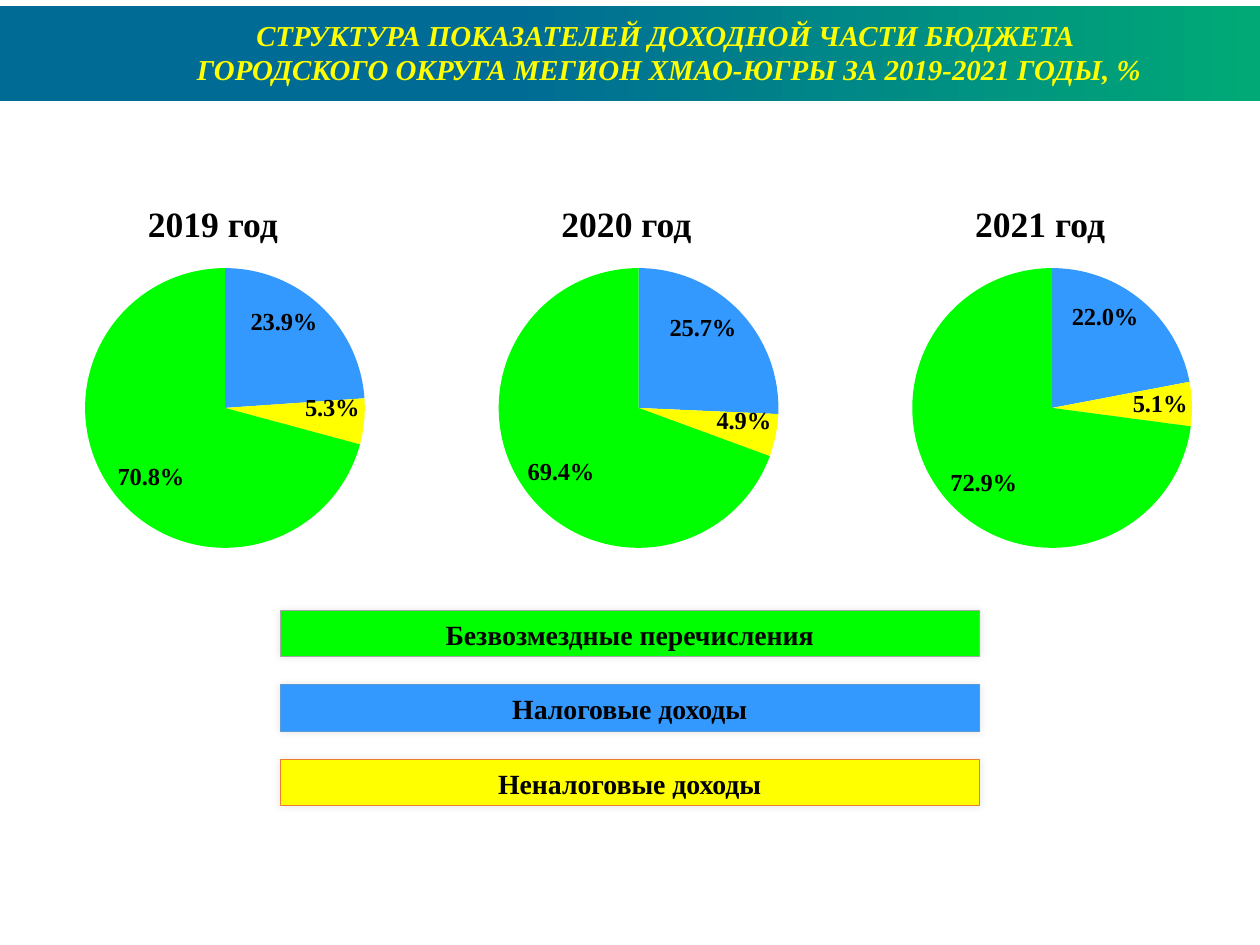
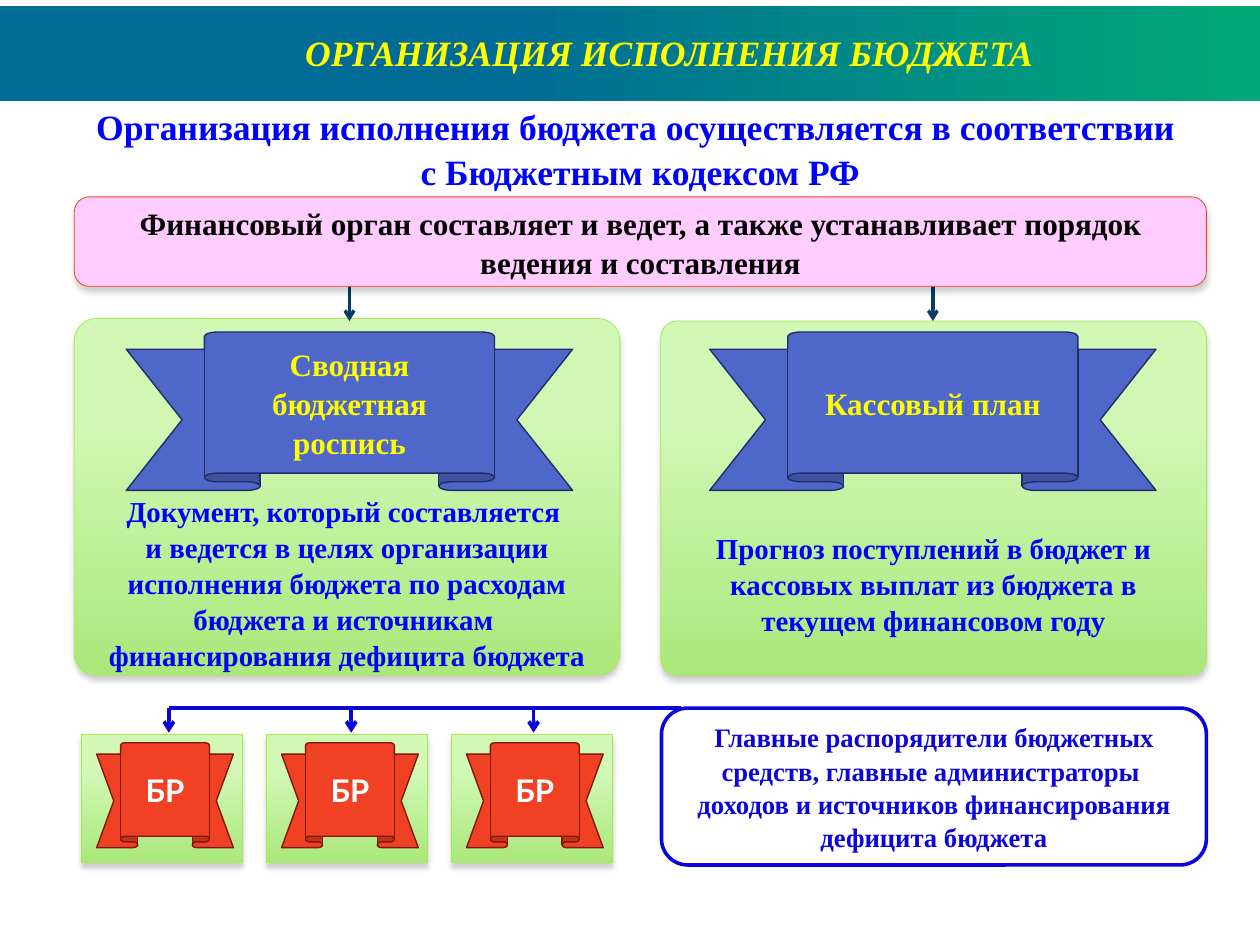
from pptx import Presentation
from pptx.chart.data import CategoryChartData
from pptx.dml.color import RGBColor
from pptx.enum.chart import XL_CHART_TYPE, XL_LABEL_POSITION
from pptx.enum.shapes import MSO_CONNECTOR, MSO_SHAPE
from pptx.enum.text import MSO_ANCHOR, MSO_AUTO_SIZE, PP_ALIGN
from pptx.oxml import parse_xml
from pptx.oxml.ns import nsdecls, qn
from pptx.util import Cm, Pt

SERIF = "Times New Roman"
BLACK, WHITE, YELLOW = "000000", "FFFFFF", "FFFF00"
GREEN, SKY, BLUE, NAVY = "00FF00", "3399FF", "0000FF", "0D03DB"
RED = "F14124"
LIME = ("D1F8B5", "AAE87B", 28, 270)
BAND = ("006C95", "00A976", 40, 0)
GLOW = {"alpha": 10, "blur": 7, "distance": 0, "angle": 0}
DROP = {"alpha": 20, "blur": 5, "distance": 4, "angle": 90}
INSETS = (0.4, 0.2, 0.4, 0.2)


def rgb(value):
    return RGBColor.from_string(value)


def cm(*values):
    return [Cm(value) for value in values]


def assign(target, values):
    for name, value in values.items():
        setattr(target, name, value)


class Slides:
    """Holds the deck, its shared style and the current page."""

    def __init__(self, width, height):
        self.deck = Presentation()
        self.deck.slide_width, self.deck.slide_height = cm(width, height)
        self.layout = self.deck.slide_layouts[5]
        self.page = None

    def add_page(self, title, size):
        first = self.page is None
        self.page = self.deck.slides.add_slide(self.layout)
        if first:
            band = self.shape(MSO_SHAPE.RECTANGLE, (0, 0.2, 40, 3), BAND)
            self.layout.shapes.element.insert(2, band.element)
        box = self.page.shapes.title
        left, top, width, height = cm(2.5, 0.4, 37.5, 2.5)
        assign(box, {"left": left, "top": top, "width": width, "height": height})
        self.set_text(box, [title], size, YELLOW, italic=True,
                      insets=(0.25, 0.1, 0.25, 0.1), spacing=1.0)

    def set_text(self, box, paragraphs, size, color, font=SERIF, italic=False,
                 insets=INSETS, spacing=1.04, wrap=True):
        """Fill a box with centred bold paragraphs; a newline inside one breaks the line."""
        frame = box.text_frame
        left, top, right, bottom = cm(*insets)
        assign(frame, {"margin_left": left, "margin_top": top, "margin_right": right,
                       "margin_bottom": bottom, "word_wrap": wrap,
                       "auto_size": MSO_AUTO_SIZE.NONE, "vertical_anchor": MSO_ANCHOR.MIDDLE})
        for index, text in enumerate(paragraphs):
            para = frame.add_paragraph() if index else frame.paragraphs[0]
            para.text = text
            assign(para, {"alignment": PP_ALIGN.CENTER, "line_spacing": spacing})
            for span in para.runs:
                assign(span.font, {"name": font, "size": Pt(size), "bold": True, "italic": italic})
                span.font.color.rgb = rgb(color)

    def text(self, area, text, size, color, **style):
        self.set_text(self.page.shapes.add_textbox(*cm(*area)), [text], size, color, **style)

    def shape(self, kind, area, fill, line=None, line_width=0.75, shadow=None, adjust=()):
        """Add a preset shape; fill is a colour or (start, end, start percent, angle)."""
        box = self.page.shapes.add_shape(kind, *cm(*area))
        for index, value in enumerate(adjust):
            box.adjustments[index] = value
        if isinstance(fill, tuple):
            start, end, position, angle = fill
            box.fill.gradient()
            box.fill.gradient_angle = angle
            for stop, color, place in zip(box.fill.gradient_stops, (start, end), (position / 100, 1)):
                stop.color.rgb = rgb(color)
                stop.position = place
        else:
            box.fill.solid()
            box.fill.fore_color.rgb = rgb(fill)
        if line:
            box.line.color.rgb = rgb(line)
            box.line.width = Pt(line_width)
        else:
            box.line.fill.background()
        box.shadow.inherit = False
        if shadow:
            effects = box.element.find(".//" + qn("a:effectLst"))
            effects.append(parse_xml(
                f'<a:outerShdw {nsdecls("a")} blurRad="{Pt(shadow["blur"])}" '
                f'dist="{Pt(shadow["distance"])}" dir="{shadow["angle"] * 60000}" rotWithShape="0">'
                f'<a:srgbClr val="{BLACK}"><a:alpha val="{shadow["alpha"] * 1000}"/></a:srgbClr>'
                '</a:outerShdw>'))
        return box

    def ribbon(self, area, fill, line, text, color, font=SERIF):
        box = self.shape(MSO_SHAPE.UP_RIBBON, area, fill, line, 1.25, adjust=(0.109, 0.65))
        self.set_text(box, [text], 28, color, font=font)

    def line(self, start, end, color, width, arrow=True):
        connector = self.page.shapes.add_connector(MSO_CONNECTOR.STRAIGHT, *cm(*start, *end))
        connector.line.color.rgb = rgb(color)
        connector.line.width = Pt(width)
        properties = connector.element.spPr
        if arrow:
            properties.find(qn("a:ln")).append(parse_xml(f'<a:tailEnd {nsdecls("a")} type="arrow"/>'))
        properties.append(parse_xml(f'<a:effectLst {nsdecls("a")}/>'))

    def pie(self, area, values, colors):
        data = CategoryChartData()
        data.categories = ["1", "2", "3"]
        data.add_series("Series 1", values)
        chart = self.page.shapes.add_chart(XL_CHART_TYPE.PIE, *cm(*area), data).chart
        assign(chart, {"has_legend": False, "has_title": False})
        assign(chart.font, {"name": SERIF, "size": Pt(10)})
        plot = chart.plots[0]
        assign(plot, {"vary_by_categories": True, "has_data_labels": True})
        labels = plot.data_labels
        assign(labels, {"show_percentage": True, "show_value": False, "number_format": "0.0%",
                        "number_format_is_linked": False, "position": XL_LABEL_POSITION.INSIDE_END})
        assign(labels.font, {"name": SERIF, "size": Pt(22), "bold": True})
        labels.font.color.rgb = rgb(BLACK)
        for index, color in enumerate(colors):
            fill = plot.series[0].points[index].format.fill
            fill.solid()
            fill.fore_color.rgb = rgb(color)
        plot_area = chart.element.find(".//" + qn("c:plotArea"))
        for layout in plot_area.findall(qn("c:layout")):
            plot_area.remove(layout)
        places = {"layoutTarget": "inner", "xMode": "edge", "yMode": "edge",
                  "x": 0.06, "y": 0.04, "w": 0.94, "h": 0.93}
        items = "".join(f'<c:{name} val="{value}"/>' for name, value in places.items())
        plot_area.insert(0, parse_xml(
            f'<c:layout {nsdecls("c")}><c:manualLayout>{items}</c:manualLayout></c:layout>'))


def build_revenue_page(slides):
    slides.add_page("СТРУКТУРА ПОКАЗАТЕЛЕЙ ДОХОДНОЙ ЧАСТИ БЮДЖЕТА \n"
                    "ГОРОДСКОГО ОКРУГА МЕГИОН ХМАО-ЮГРЫ ЗА 2019-2021 ГОДЫ, %", 26)
    shares = {2019: (23.9, 5.3, 70.8), 2020: (25.7, 4.9, 69.4), 2021: (22, 5.1, 72.9)}
    for column, (year, values) in enumerate(shares.items()):
        shift = column * 13.13
        slides.text((4.27 + shift, 6.17, 4.98, 1.78), f"{year} год", 32, BLACK, wrap=False)
        slides.pie((0.48 + shift, 8.13, 12.57, 9.55), values, (SKY, YELLOW, GREEN))
    legend = (("Безвозмездные перечисления", GREEN, "A5A5A5"),
              ("Налоговые доходы", SKY, "5B9BD5"),
              ("Неналоговые доходы", YELLOW, "ED7D31"))
    for row, (name, fill, line) in enumerate(legend):
        bar = slides.shape(MSO_SHAPE.RECTANGLE, (8.89, 19.38 + row * 2.36, 22.2, 1.47),
                           fill, line, 0.5, GLOW)
        slides.set_text(bar, [name], 25, BLACK)


def build_execution_page(slides):
    slides.add_page("ОРГАНИЗАЦИЯ ИСПОЛНЕНИЯ БЮДЖЕТА", 32)
    rounded = MSO_SHAPE.ROUNDED_RECTANGLE
    bus_top = 22.48
    for column in range(3):
        x = 5.36 + column * 5.79
        slides.line((x, bus_top), (x, 23.26), NAVY, 3.25)
    slides.line((5.36, bus_top), (21.62, bus_top), NAVY, 3.25, arrow=False)
    slides.text((2.36, 3.45, 35.94, 2.49),
                "Организация исполнения бюджета осуществляется в соответствии \n"
                "с Бюджетным кодексом РФ", 32, BLUE)

    panels = (
        (2.36, 10.11, 4.01, 0.063, "Сводная бюджетная роспись",
         ["Документ, который составляется ",
          "и ведется в целях организации исполнения бюджета по расходам бюджета и источникам ",
          "финансирования дефицита бюджета"]),
        (20.98, 10.19, 22.53, 0.046, "Кассовый план",
         ["Прогноз поступлений в бюджет и кассовых выплат из бюджета в текущем финансовом году"]),
    )
    for left, top, ribbon_left, corner, name, description in panels:
        panel = slides.shape(rounded, (left, top, 17.32, 21.44 - top), LIME, "A7EA52",
                             shadow=DROP, adjust=(corner,))
        slides.set_text(panel, description, 26, BLUE, insets=(0.4, 5.5, 0.4, 0.1))
        slides.ribbon((ribbon_left, 10.54, 14.17, 5.03), "4E67C8", "1F2E69", name, YELLOW)
        middle = ribbon_left + 14.17 / 2
        slides.line((middle, 8.61), (middle, 10.19), "073C65", 3)

    for column in range(3):
        left = 2.59 + column * 5.87
        slides.shape(MSO_SHAPE.RECTANGLE, (left, 23.3, 5.11, 4.09), LIME, "A7EA52", shadow=DROP)
        slides.ribbon((left + 0.48, 23.58, 4.34, 3.33), RED, "831705", "БР", WHITE, font="Lato")

    managers = slides.shape(rounded, (21, bus_top, 17.3, 4.98), WHITE, NAVY, 3.25)
    slides.set_text(managers, ["Главные распорядители бюджетных средств, главные администраторы \n"
                               "доходов и источников финансирования дефицита бюджета"], 24, NAVY)
    authority = slides.shape(rounded, (2.36, 6.25, 35.94, 2.84), "FFCCFF", RED, shadow=DROP)
    slides.set_text(authority, ["Финансовый орган составляет и ведет, а также устанавливает порядок "
                                "ведения и составления"], 28, BLACK)


def main():
    slides = Slides(40, 30)
    build_revenue_page(slides)
    build_execution_page(slides)
    slides.deck.save("out.pptx")


if __name__ == "__main__":
    main()
